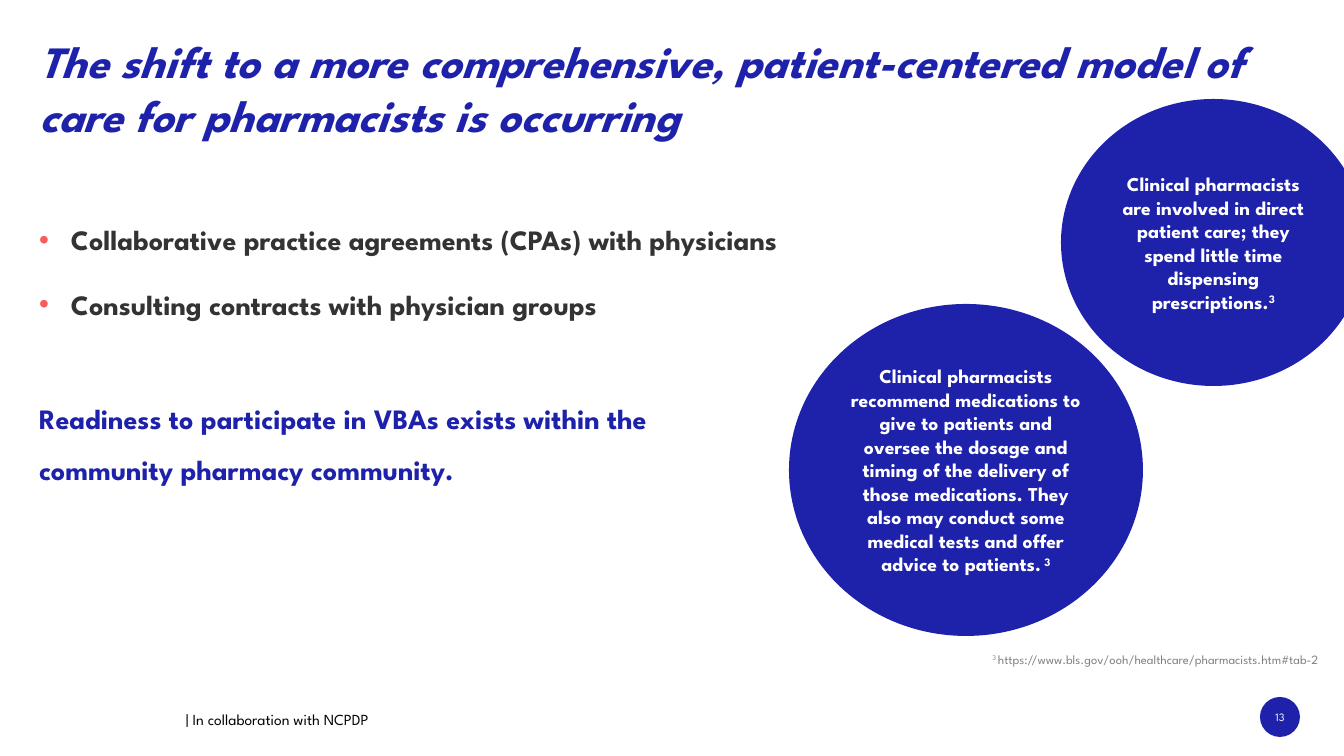
from lxml import etree
from pptx import Presentation, util as u
from pptx.dml.color import RGBColor
from pptx.enum import shapes, text
from pptx.oxml.ns import qn

FONT = "League Spartan"
BLUE, CORAL, DARK, GRAY, WHITE, BLACK = (
    "1E22AA", "FF5A5A", "333333", "808080", "FFFFFF", "000000")
LEFT, CENTER, RIGHT = text.PP_ALIGN.LEFT, text.PP_ALIGN.CENTER, text.PP_ALIGN.RIGHT

# Boxes are left, top, width, height in px; runs are (words, superscript).
TITLE = ("The shift to a more comprehensive, patient-centered model of care "
         "for pharmacists is occurring")
AGREEMENTS = [
    "Collaborative practice agreements (CPAs) with physicians",
    "Consulting contracts with physician groups",
]
READINESS = ["Readiness to participate in VBAs exists within the",
             "community pharmacy community."]
CIRCLES = [
    ((1061, 99, 305, 287),
     [("Clinical pharmacists are involved in direct patient care; they spend "
       "little time dispensing prescriptions.", False), ("3", True)]),
    ((789, 304, 354, 332),
     [("Clinical pharmacists recommend medications to give to patients and "
       "oversee the dosage and timing of the delivery of those medications. "
       "They also may conduct some medical tests and offer advice to patients.",
       False), (" 3", True)]),
]
SOURCE = [("3 ", True),
          ("https://www.bls.gov/ooh/healthcare/pharmacists.htm#tab-2", False)]
FOOTER = "| In collaboration with NCPDP"
PAGE_NUMBER = "13"


def px(n):
    return u.Emu(round(n * 914400 / 100.8))


def rgb(color):
    return RGBColor.from_string(color)


def style(paragraph, size, color, bold=False, italic=False, align=LEFT):
    paragraph.alignment = align
    font = paragraph.font
    font.name, font.size, font.bold, font.italic = FONT, u.Pt(size), bold, italic
    font.color.rgb = rgb(color)


def add_runs(paragraph, runs):
    for words, superscript in runs:
        run = paragraph.add_run()
        run.text = words
        if superscript:
            run._r.get_or_add_rPr().set("baseline", "30000")


def add_box(box, inset=True):
    frame = slide.shapes.add_textbox(*map(px, box)).text_frame
    frame.word_wrap = True
    if not inset:
        frame.margin_left = frame.margin_right = 0
        frame.margin_top = frame.margin_bottom = 0
    return frame


def add_circle(box):
    circle = slide.shapes.add_shape(shapes.MSO_SHAPE.OVAL, *map(px, box))
    circle.shadow.inherit = False
    circle.fill.solid()
    circle.fill.fore_color.rgb = rgb(BLUE)
    circle.line.fill.background()
    return circle.text_frame


def add_bullet(paragraph, indent):
    props = paragraph._p.get_or_add_pPr()
    props.set("marL", str(px(indent)))
    props.set("indent", str(-px(indent)))
    color = etree.SubElement(props, qn("a:buClr"))
    etree.SubElement(color, qn("a:srgbClr"), val=CORAL)
    etree.SubElement(props, qn("a:buFont"), typeface="Arial")
    etree.SubElement(props, qn("a:buChar"), char="•")


prs = Presentation()
prs.slide_width, prs.slide_height = px(1344), px(756)
slide = prs.slides.add_slide(prs.slide_layouts[6])

add_circle((1260, 697, 40, 40))
footer = add_box((176, 705, 444, 29)).paragraphs[0]
footer.text = FOOTER
style(footer, 11, BLACK)

body = add_box((39, 206, 1084, 419), inset=False)
for i, agreement in enumerate(AGREEMENTS):
    item = body.add_paragraph() if i else body.paragraphs[0]
    item.text = agreement
    item.line_spacing = 1.5
    if i:
        item.space_before = u.Pt(10)
    add_bullet(item, 32)
    style(item, 20, DARK, bold=True)
readiness = body.add_paragraph()
readiness.text = "\v".join(READINESS)
readiness.line_spacing = 1.5
readiness.space_before = u.Pt(46)
style(readiness, 20, BLUE, bold=True)

number = add_box((1252, 705, 56, 25), inset=False)
number.vertical_anchor = text.MSO_ANCHOR.MIDDLE
number.paragraphs[0].text = PAGE_NUMBER
style(number.paragraphs[0], 8, WHITE, align=CENTER)

title = add_box((39, 34, 1226, 113), inset=False).paragraphs[0]
title.text = TITLE
style(title, 32, BLUE, bold=True, italic=True)

for box, runs in CIRCLES:
    role = add_circle(box)
    role.word_wrap = True
    role.vertical_anchor = text.MSO_ANCHOR.MIDDLE
    add_runs(role.paragraphs[0], runs)
    style(role.paragraphs[0], 14, WHITE, bold=True, align=CENTER)

source = add_box((211, 647, 1117, 40)).paragraphs[0]
add_runs(source, SOURCE)
style(source, 9, GRAY, align=RIGHT)

prs.save("out.pptx")
